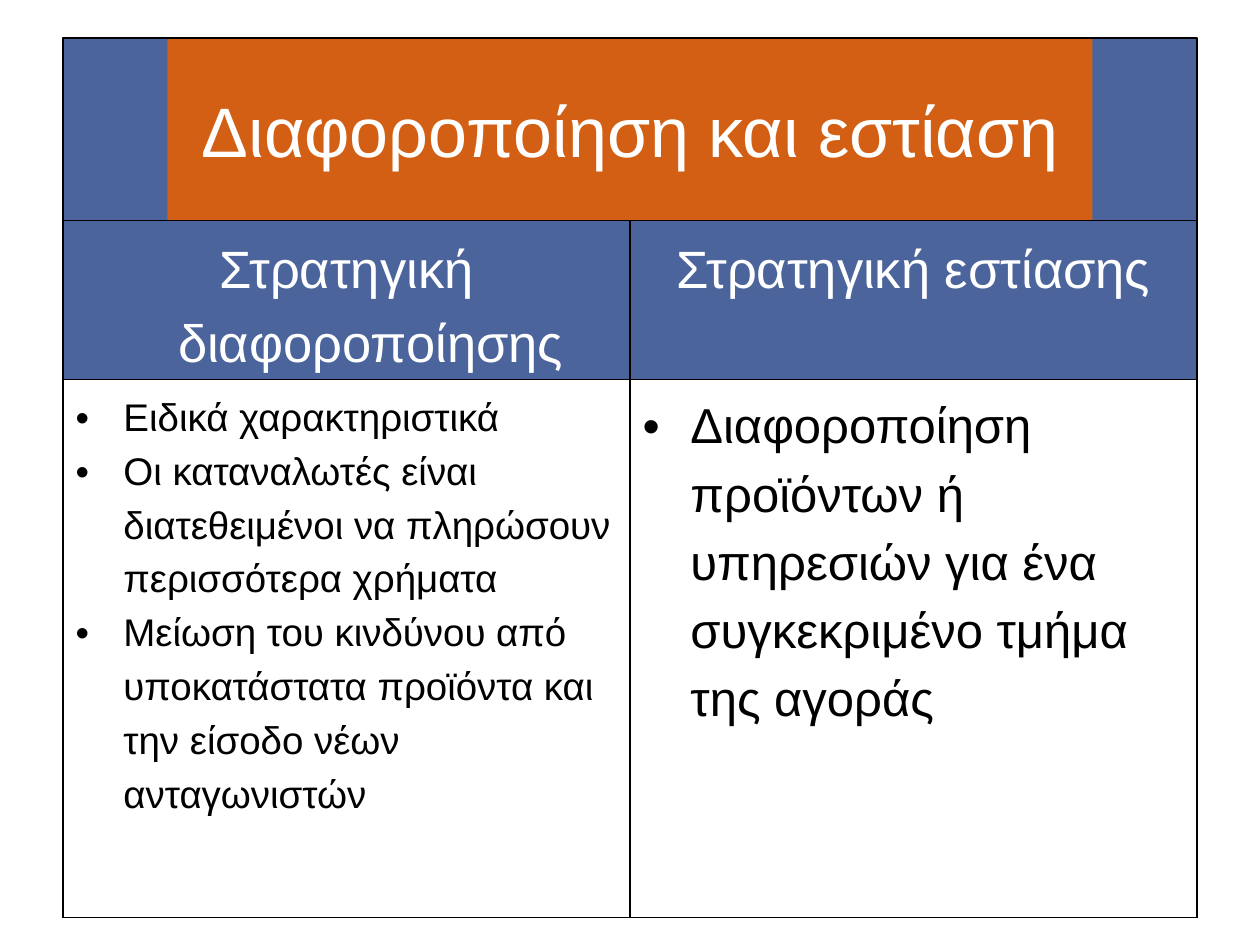
from pptx import Presentation
from pptx.dml.color import RGBColor
from pptx.enum.shapes import MSO_SHAPE
from pptx.enum.text import MSO_ANCHOR, PP_ALIGN
from pptx.oxml.ns import qn
from pptx.util import Inches, Pt
from lxml.etree import SubElement

COLORS = {"orange": "D25F14", "blue": "4B649B", "white": "FFFFFF", "black": "000000"}
FONT = "Arial"
LEFT, TOP, WIDTH, TITLE_H, SIDE_W = 0.5, 0.3, 9, 1.45, 0.83


def add_text(p, text, size, color):
    r = p.add_run()
    r.text = text
    r.font.size = Pt(size)
    r.font.name = FONT
    r.font.color.rgb = RGBColor.from_string(COLORS[color])


def add_rect(left, width):
    sp = s.shapes.add_shape(MSO_SHAPE.RECTANGLE, Inches(left), Inches(TOP),
                            Inches(width), Inches(TITLE_H))
    sp.shadow.inherit = False
    return sp


prs = Presentation()
prs.slide_width, prs.slide_height = Inches(10), Inches(7.5)
s = prs.slides.add_slide(prs.slide_layouts[5])

# Title
title = s.shapes.title
title.left, title.top = Inches(LEFT), Inches(TOP)
title.width, title.height = Inches(WIDTH), Inches(TITLE_H)
title.fill.solid()
title.fill.fore_color.rgb = RGBColor.from_string(COLORS["orange"])
tf = title.text_frame
tf.word_wrap = True
tf.vertical_anchor = MSO_ANCHOR.MIDDLE
p = tf.paragraphs[0]
p.alignment = PP_ALIGN.CENTER
add_text(p, "Διαφοροποίηση και εστίαση", 40, "white")

# Table: text size, indent and paragraphs of each cell
rows = [
    [(30, 0.5, ["Στρατηγική διαφοροποίησης "]),
     (30, 0.38, ["Στρατηγική εστίασης"])],
    [(22, 0.38, ["Ειδικά χαρακτηριστικά",
                 "Οι καταναλωτές είναι διατεθειμένοι να πληρώσουν περισσότερα χρήματα",
                 "Μείωση του κινδύνου από υποκατάστατα προϊόντα και την είσοδο νέων ανταγωνιστών"]),
     (28, 0.38, ["Διαφοροποίηση προϊόντων ή υπηρεσιών για ένα συγκεκριμένο τμήμα της αγοράς"])],
]
row_heights = [1.23, 4.27]
table = s.shapes.add_table(2, 2, Inches(LEFT), Inches(TOP + TITLE_H),
                           Inches(WIDTH), Inches(sum(row_heights))).table
table.first_row = table.horz_banding = False

for i, row in enumerate(rows):
    table.rows[i].height = Inches(row_heights[i])
    header = i == 0
    for j, (size, indent, texts) in enumerate(row):
        cell = table.cell(i, j)
        # Borders come before the fill in the cell properties
        tcPr = cell._tc.get_or_add_tcPr()
        for side in ("a:lnL", "a:lnR", "a:lnT", "a:lnB"):
            ln = SubElement(tcPr, qn(side), w=str(Pt(1)))
            fill = SubElement(ln, qn("a:solidFill"))
            SubElement(fill, qn("a:srgbClr"), val=COLORS["black"])
        if header:
            cell.fill.solid()
            cell.fill.fore_color.rgb = RGBColor.from_string(COLORS["blue"])
        else:
            cell.fill.background()

        tf = cell.text_frame
        for n, text in enumerate(texts):
            p = tf.add_paragraph() if n else tf.paragraphs[0]
            p.alignment = PP_ALIGN.CENTER if header else PP_ALIGN.LEFT
            p.line_spacing = 1.25
            pPr = p._p.get_or_add_pPr()
            pPr.set("marL", str(Inches(indent)))
            pPr.set("indent", str(-Inches(indent)))
            if not header:
                SubElement(pPr, qn("a:buFont"), typeface=FONT)
                SubElement(pPr, qn("a:buChar"), char="•")
            add_text(p, text, size, "white" if header else "black")

# Side blocks of the title band
for left in (LEFT, LEFT + WIDTH - SIDE_W):
    block = add_rect(left, SIDE_W)
    block.fill.solid()
    block.fill.fore_color.rgb = RGBColor.from_string(COLORS["blue"])
    block.line.fill.background()

# Frame around the title band
frame = add_rect(LEFT, WIDTH)
frame.fill.background()
frame.line.color.rgb = RGBColor.from_string(COLORS["black"])
frame.line.width = Pt(1)

prs.save("out.pptx")
